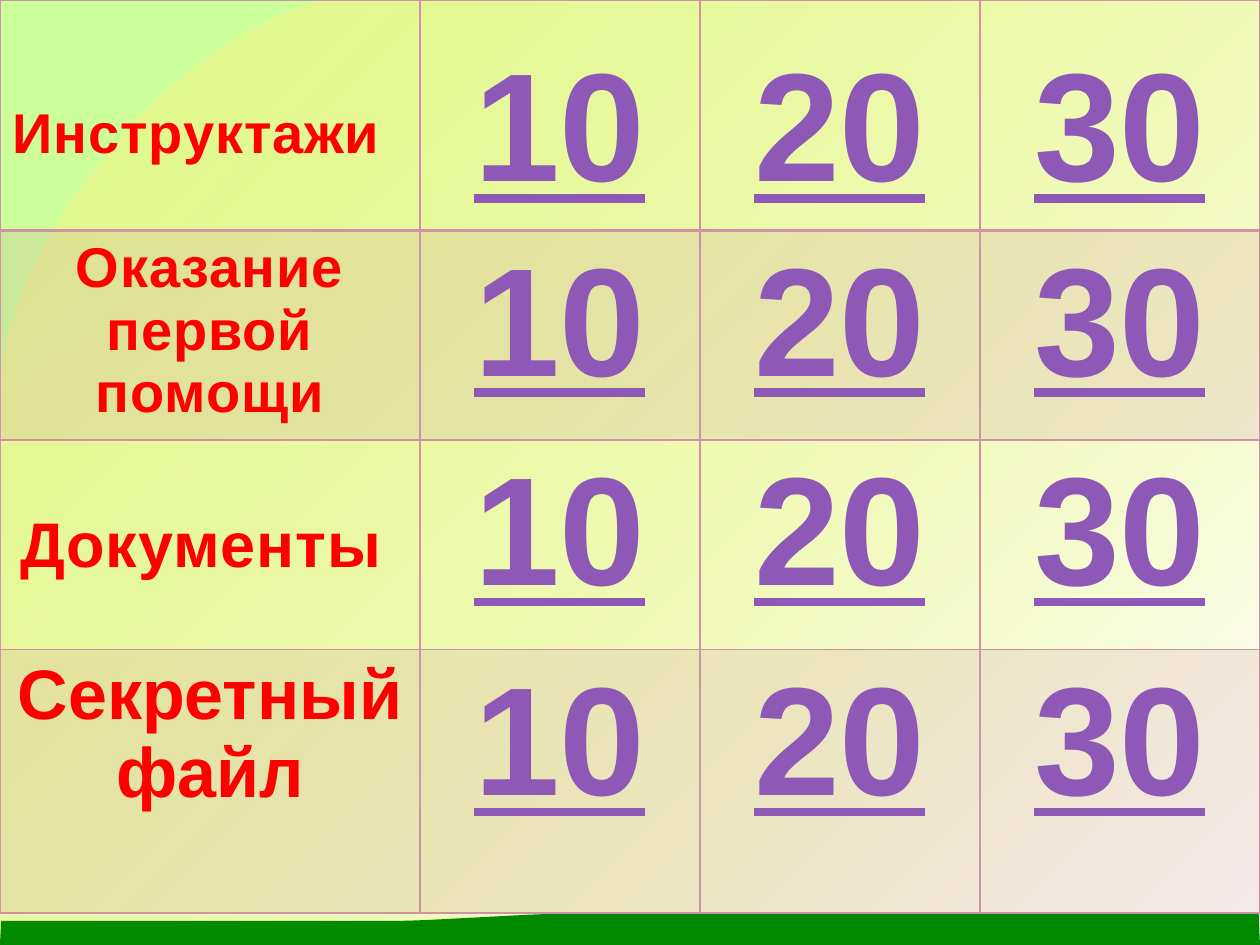
from dataclasses import dataclass

from lxml import etree
from pptx import Presentation
from pptx.dml.color import RGBColor
from pptx.enum.text import PP_ALIGN
from pptx.oxml.ns import qn
from pptx.util import Pt

LEFT, CENTER = PP_ALIGN.LEFT, PP_ALIGN.CENTER
WIDTH, HEIGHT = 720, 540
RED, PURPLE, PINK = "FF0000", "8E58B6", "D092A7"
SCORES = ("10", "20", "30")
COLUMN_WIDTHS = (240, 160, 160, 160)


@dataclass(frozen=True)
class Category:
    label: str
    size: float
    height: float
    spacing: float = 0.5
    align: PP_ALIGN = CENTER
    label_top: float = 3.6
    score_top: float = 3.6
    shaded: bool = False


CATEGORIES = (
    Category("Инструктажи", 32, 131.6, align=LEFT, label_top=58.8, score_top=24.3),
    Category("Оказание первой помощи", 32, 119.8, shaded=True),
    Category("Документы ", 36, 119.8, label_top=40.4),
    Category("Секретный файл", 40, 150.5, spacing=0, shaded=True),
)


def color(value: str) -> RGBColor:
    return RGBColor.from_string(value)


def add_alpha(fill_element, percent: float) -> None:
    """Set the opacity of the first colour found in a fill."""
    first_color = next(fill_element.iter(qn("a:srgbClr")))
    etree.SubElement(first_color, qn("a:alpha")).set("val", str(int(percent * 1000)))


def curve(start, control_1, control_2, end, steps: int = 24) -> list:
    """Points along a cubic curve, without its start."""
    points = []
    for step in range(1, steps + 1):
        t = step / steps
        weights = ((1 - t) ** 3, 3 * t * (1 - t) ** 2, 3 * t * t * (1 - t), t ** 3)
        corners = (start, control_1, control_2, end)
        points.append(tuple(sum(w * corner[axis] for w, corner in zip(weights, corners))
                            for axis in (0, 1)))
    return points


def add_outline(slide, points: list):
    """Closed borderless freeform through points in points."""
    start, *others = [(Pt(x), Pt(y)) for x, y in points]
    builder = slide.shapes.build_freeform(*start, scale=1.0)
    builder.add_line_segments(others, close=True)
    shape = builder.convert_to_shape()
    shape.shadow.inherit = False
    shape.line.fill.background()
    return shape


def add_border(cell, side: str, width: float) -> None:
    line = etree.SubElement(cell._tc.get_or_add_tcPr(), qn(f"a:ln{side}"), w=str(Pt(width)))
    solid = etree.SubElement(line, qn("a:solidFill"))
    etree.SubElement(solid, qn("a:srgbClr"), val=PINK)


def write_text(cell, text: str, *, size: float, text_color: str, top: float = 3.6,
               align: PP_ALIGN = CENTER, spacing: float = 0, underline: bool = False) -> None:
    cell.margin_top = Pt(top)
    paragraph = cell.text_frame.paragraphs[0]
    paragraph.alignment = align
    run = paragraph.add_run()
    run.text = text
    run.font.name = "Arial"
    run.font.size = Pt(size)
    run.font.bold = True
    run.font.underline = underline
    run.font.color.rgb = color(text_color)
    run.font._element.set("spc", str(int(spacing * 100)))


def format_cell(cell, row: int, shaded: bool) -> None:
    # The rule under the first row is heavier
    widths = {"L": 1, "R": 1, "T": 2 if row == 1 else 1, "B": 2 if row == 0 else 1}
    for side, width in widths.items():
        add_border(cell, side, width)
    if shaded:
        cell.fill.solid()
        cell.fill.fore_color.rgb = color(PINK)
        add_alpha(cell._tc.tcPr.find(qn("a:solidFill")), 20)
    else:
        cell.fill.background()


def add_backdrop(slide) -> None:
    slide.background.fill.solid()
    slide.background.fill.fore_color.rgb = color("CCFF99")

    # Pale sheet with a curved upper left corner
    points = [(185.8, 0)]
    points += curve(points[-1], (136.8, 11.5), (83.5, 59.8), (70.6, 77))
    points += curve(points[-1], (57.6, 95), (11.5, 139.7), (0, 216.7))
    sheet = add_outline(slide, points + [(0, HEIGHT), (WIDTH, HEIGHT), (WIDTH, 0)])
    sheet.fill.gradient()
    sheet.fill.gradient_angle = 315
    for stop, position, value in zip(sheet.fill.gradient_stops, (0, 1), ("FCF073", "FFFFFF")):
        stop.position = position
        stop.color.rgb = color(value)
    add_alpha(sheet._element.spPr.find(qn("a:gradFill")), 39)

    # Green strip along the bottom
    points = [(719.3, 522), (340.6, 522)]
    points += curve(points[-1], (322.6, 522), (317.5, 522), (302.4, 522.7))
    points.append((246.2, 525.6))
    points += curve(points[-1], (230.4, 526.3), (227.5, 526.3), (205.9, 526.3))
    strip = add_outline(slide, points + [(0.7, 526.3), (0, HEIGHT), (WIDTH, HEIGHT)])
    strip.fill.solid()
    strip.fill.fore_color.rgb = color("008A00")


def add_score_table(slide) -> None:
    height = sum(category.height for category in CATEGORIES)
    frame = slide.shapes.add_table(len(CATEGORIES), len(COLUMN_WIDTHS),
                                   0, 0, Pt(WIDTH), Pt(height))
    table = frame.table
    table.first_row = table.horz_banding = False
    for column, width in zip(table.columns, COLUMN_WIDTHS):
        column.width = Pt(width)
    for row, category in enumerate(CATEGORIES):
        table.rows[row].height = Pt(category.height)
        write_text(table.cell(row, 0), category.label, size=category.size, text_color=RED,
                   top=category.label_top, align=category.align, spacing=category.spacing)
        for column, score in enumerate(SCORES, start=1):
            write_text(table.cell(row, column), score, size=88, text_color=PURPLE,
                       top=category.score_top, underline=True)
        for cell in table.rows[row].cells:
            format_cell(cell, row, category.shaded)


def main() -> None:
    presentation = Presentation()
    presentation.slide_width, presentation.slide_height = Pt(WIDTH), Pt(HEIGHT)
    slide = presentation.slides.add_slide(presentation.slide_layouts[6])
    add_backdrop(slide)
    add_score_table(slide)
    presentation.save("out.pptx")


if __name__ == "__main__":
    main()
